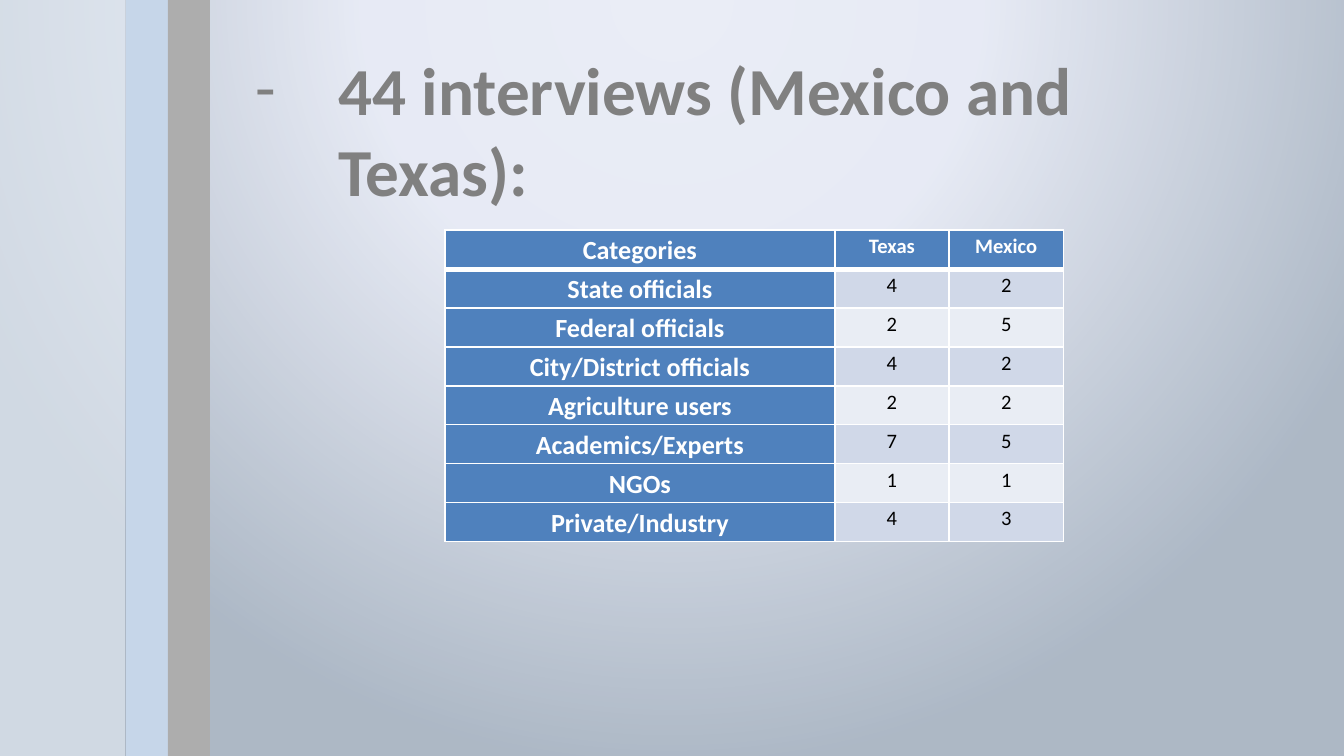
from dataclasses import dataclass

from lxml import etree
from pptx import Presentation
from pptx.dml.color import RGBColor
from pptx.enum.shapes import MSO_SHAPE
from pptx.enum.text import PP_ALIGN
from pptx.oxml import parse_xml
from pptx.oxml.ns import nsdecls, qn
from pptx.util import Inches, Pt

RECTANGLE = MSO_SHAPE.RECTANGLE
CENTER = PP_ALIGN.CENTER
SLIDE_WIDTH = Inches(10)
SLIDE_HEIGHT = SLIDE_WIDTH * 9 // 16


@dataclass(frozen=True)
class Theme:
    font: str = "Calibri"
    blue: str = "4F81BD"
    pale_blue: str = "B9CDE5"
    white: str = "FFFFFF"
    black: str = "000000"
    heading: str = "808080"
    bands: tuple = ("D0D8E8", "E9EDF4")
    backdrop: tuple = ((0, "BFC9E5"), (40, "B5C0E0"), (100, "00234D"))
    heading_size: int = 36
    label_size: int = 14
    value_size: int = 11
    rule: int = 1
    header_rule: int = 3


THEME = Theme()
ROWS = (
    ("Categories", "Texas", "Mexico"),
    ("State officials", "4", "2"),
    ("Federal officials", "2", "5"),
    ("City/District officials", "4", "2"),
    ("Agriculture users", "2", "2"),
    ("Academics/Experts", "7", "5"),
    ("NGOs", "1", "1"),
    ("Private/Industry", "4", "3"),
)
COLUMN_PERCENTS = (63, 18.5, 18.5)


def percent_box(left, top, width, height):
    return (
        int(left * SLIDE_WIDTH / 100),
        int(top * SLIDE_HEIGHT / 100),
        int(width * SLIDE_WIDTH / 100),
        int(height * SLIDE_HEIGHT / 100),
    )


def set_format(target, values):
    for name, value in values.items():
        setattr(target, name, value)


def set_font(paragraph, size, color, bold):
    for styled in (paragraph, *paragraph.runs):
        set_format(styled.font, {"name": THEME.font, "size": Pt(size), "bold": bold})
        styled.font.color.rgb = RGBColor.from_string(color)


def paint_backdrop(slide):
    slide.background.fill.solid()
    properties = slide.element.find(".//" + qn("p:bgPr"))
    stops = "".join(
        f'<a:gs pos="{position * 1000}"><a:srgbClr val="{color}"/></a:gs>'
        for position, color in THEME.backdrop
    )
    gradient = parse_xml(
        f'<a:gradFill {nsdecls("a")} rotWithShape="1"><a:gsLst>{stops}</a:gsLst>'
        '<a:path path="circle"><a:fillToRect l="50000" t="-80000" r="50000" b="180000"/>'
        "</a:path></a:gradFill>"
    )
    properties.replace(properties[0], gradient)


def add_panel(slide, box, color, opacity):
    panel = slide.shapes.add_shape(RECTANGLE, *box)
    panel.shadow.inherit = False
    panel.fill.solid()
    panel.fill.fore_color.rgb = RGBColor.from_string(color)
    panel.line.fill.background()
    if opacity < 100:
        tint = panel.element.spPr.find(".//" + qn("a:srgbClr"))
        etree.SubElement(tint, qn("a:alpha"), val=str(opacity * 1000))


def add_side_bands(slide):
    for left, width, color, opacity in (
        (9.38, 3.12, THEME.blue, 100),
        (12.5, 3.12, THEME.black, 100),
        (-0.7, 10, THEME.pale_blue, 60),
        (-0.8, 100.8, THEME.white, 68),
    ):
        add_panel(slide, percent_box(left, 0, width, 100), color, opacity)


def add_heading(slide, box):
    frame = slide.shapes.add_textbox(*box).text_frame
    frame.word_wrap = True
    heading = frame.paragraphs[0]
    heading.text = "44 interviews (Mexico and Texas):"
    properties = heading._p.get_or_add_pPr()
    indent = Inches(0.62)
    properties.set("marL", str(indent))
    properties.set("indent", str(-indent))
    etree.SubElement(properties, qn("a:buFont"), typeface=THEME.font)
    etree.SubElement(properties, qn("a:buChar"), char="-")
    set_font(heading, THEME.heading_size, THEME.heading, True)


def rule_cell(cell, row):
    properties = cell._tc.get_or_add_tcPr()
    weights = {
        "L": THEME.rule,
        "R": THEME.rule,
        "T": THEME.header_rule if row == 1 else THEME.rule,
        "B": THEME.header_rule if row == 0 else THEME.rule,
    }
    for place, (side, weight) in enumerate(weights.items()):
        rule = parse_xml(
            f'<a:ln{side} {nsdecls("a")} w="{Pt(weight)}"><a:solidFill>'
            f'<a:srgbClr val="{THEME.white}"/></a:solidFill></a:ln{side}>'
        )
        properties.insert(place, rule)


def fill_cell(cell, text, row, column):
    is_label = row == 0 or column == 0
    margins = {"margin_left": Inches(0.07), "margin_right": Inches(0.07),
               "margin_top": 0, "margin_bottom": 0}
    set_format(cell, margins)
    cell.fill.solid()
    color = THEME.blue if is_label else THEME.bands[(row - 1) % 2]
    cell.fill.fore_color.rgb = RGBColor.from_string(color)
    entry = cell.text_frame.paragraphs[0]
    entry.text = text
    set_format(entry, {"alignment": CENTER, "line_spacing": 1.15})
    set_font(
        entry,
        THEME.label_size if column == 0 else THEME.value_size,
        THEME.white if is_label else THEME.black,
        is_label,
    )
    rule_cell(cell, row)


def add_interview_table(slide, box):
    width, height = box[2:]
    table = slide.shapes.add_table(len(ROWS), len(COLUMN_PERCENTS), *box).table
    for column, portion in zip(table.columns, COLUMN_PERCENTS):
        column.width = int(width * portion / 100)
    for row, entries in enumerate(ROWS):
        table.rows[row].height = height // len(ROWS)
        for column, text in enumerate(entries):
            fill_cell(table.cell(row, column), text, row, column)


def main():
    deck = Presentation()
    set_format(deck, {"slide_width": SLIDE_WIDTH, "slide_height": SLIDE_HEIGHT})
    slide = deck.slides.add_slide(deck.slide_layouts[6])
    paint_backdrop(slide)
    add_side_bands(slide)
    add_heading(slide, percent_box(18, 5.55, 76.6, 44.8))
    add_interview_table(slide, percent_box(33.13, 30.45, 46, 41.2))
    deck.save("out.pptx")


if __name__ == "__main__":
    main()
